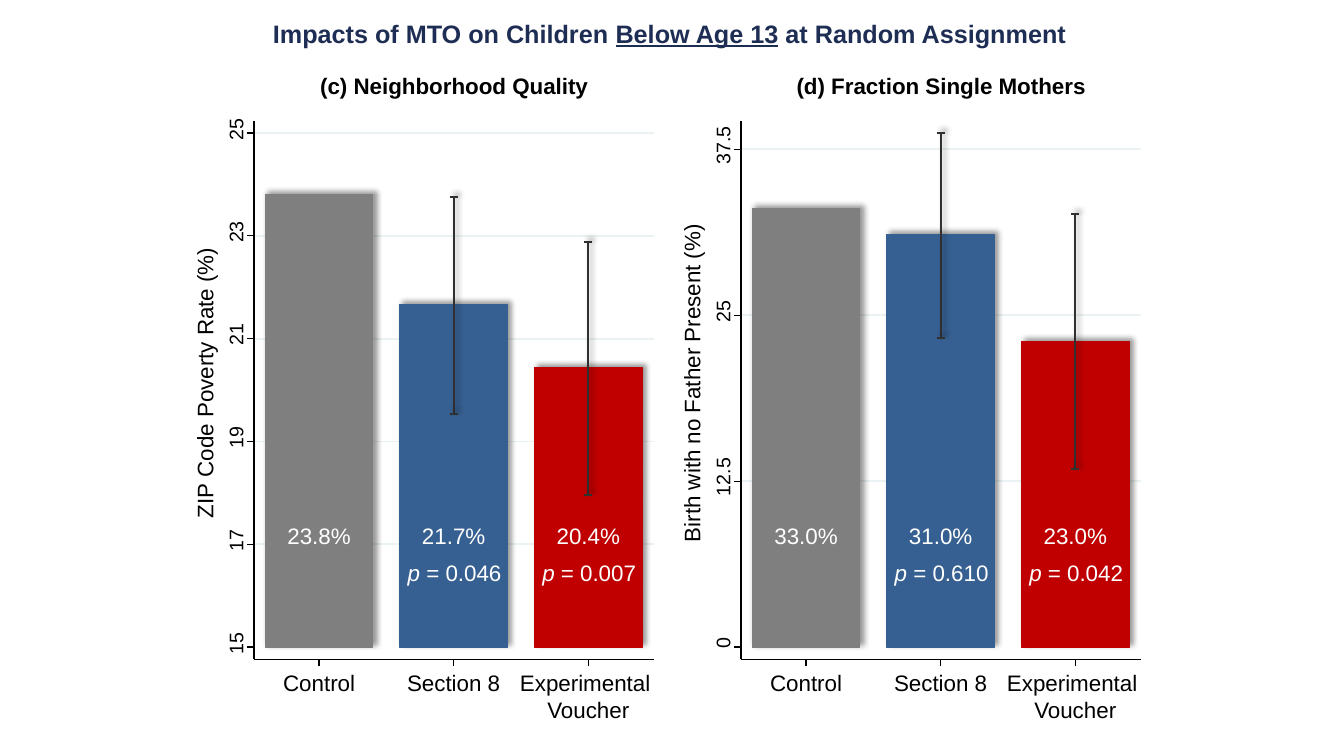
import pptx
import pptx.dml.color
import pptx.enum.shapes
import pptx.enum.text
import pptx.oxml
import pptx.oxml.ns
import pptx.util
from pptx.util import Inches

FONT = "Arial"
BLACK, WHITE, NAVY = "000000", "FFFFFF", "1E2D53"
GRID, WHISKER = "EAF2F3", "303030"
CENTER = pptx.enum.text.PP_ALIGN.CENTER
LEFT = pptx.enum.text.PP_ALIGN.LEFT

GROUPS = [
    (["Control"], "7F7F7F", 0.72),
    (["Section 8"], "376092", 0.93),
    (["Experimental ", "Voucher"], "C00000", 1.37),
]

# Each bar: value, label, p-value, low and high end of the error bar
PANELS = [
    dict(left=2.52, title="(c) Neighborhood Quality", title_w=2.9,
         axis=" ZIP Code Poverty Rate (%)", axis_w=2.78,
         ticks=[15, 17, 19, 21, 23, 25], rise=5.1,
         bars=[(23.8, "23.8%", None, None, None),
               (21.66, "21.7%", "0.046", 19.53, 23.76),
               (20.43, "20.4%", "0.007", 17.96, 22.88)]),
    dict(left=7.35, title="(d) Fraction Single Mothers", title_w=3.11,
         axis=" Birth with no Father Present (%)", axis_w=3.26,
         ticks=[0, 12.5, 25, 37.5], rise=4.94,
         bars=[(33, "33.0%", None, None, None),
               (31.05, "31.0%", "0.610", 23.3, 38.71),
               (23, "23.0%", "0.042", 13.44, 32.64)]),
]


def color(value):
    return pptx.dml.color.RGBColor.from_string(value)


def set_effects(sp, shadow):
    """Give the shape a soft shadow, or an empty effect list."""
    sp_pr = sp._element.spPr
    xml = '<a:effectLst %s>' % pptx.oxml.ns.nsdecls("a")
    if shadow:
        xml += ('<a:outerShdw blurRad="50800" dist="38100" dir="18900000" '
                'algn="bl" rotWithShape="0"><a:srgbClr val="000000">'
                '<a:alpha val="40000"/></a:srgbClr></a:outerShdw>')
    sp_pr.append(pptx.oxml.parse_xml(xml + '</a:effectLst>'))


def add_line(s, x1, y1, x2, y2, rgb=BLACK, width=0.88, shadow=False):
    line = s.shapes.add_connector(
        pptx.enum.shapes.MSO_CONNECTOR.STRAIGHT,
        Inches(x1), Inches(y1), Inches(x2), Inches(y2))
    line.line.color.rgb = color(rgb)
    line.line.width = pptx.util.Pt(width)
    set_effects(line, shadow)


def add_run(p, text, size, rgb, bold=False, italic=False, underline=False):
    r = p.add_run()
    r.text = text
    r.font.name = FONT
    r.font.size = pptx.util.Pt(size)
    r.font.color.rgb = color(rgb)
    r.font.bold, r.font.italic, r.font.underline = bold, italic, underline


def add_text(s, box, paragraphs, size=16, rgb=BLACK, align=CENTER,
             bold=False, inset=True, wrap=False, rotation=0):
    """Paragraphs are lists of (text, italic) runs."""
    sp = s.shapes.add_textbox(*map(Inches, box))
    sp.rotation = rotation
    tf = sp.text_frame
    tf.word_wrap = wrap
    if not inset:
        tf.margin_left = tf.margin_right = tf.margin_top = tf.margin_bottom = 0
    for i, runs in enumerate(paragraphs):
        p = tf.add_paragraph() if i else tf.paragraphs[0]
        p.alignment = align
        for text, italic in runs:
            add_run(p, text, size, rgb, bold, italic)


def add_upright(s, cx, cy, w, h, text, size):
    """Text that reads upwards, centred on a point."""
    add_text(s, (cx - w / 2, cy - h / 2, w, h), [[(text, False)]], size,
             align=LEFT, inset=False, rotation=270)


def add_title(s, left, top, width, height):
    title = s.shapes.title
    title.left, title.top = Inches(left), Inches(top)
    title.width, title.height = Inches(width), Inches(height)
    tf = title.text_frame
    tf.word_wrap = True
    tf.auto_size = pptx.enum.text.MSO_AUTO_SIZE.NONE
    tf.vertical_anchor = pptx.enum.text.MSO_ANCHOR.TOP
    p = tf.paragraphs[0]
    p.alignment = CENTER
    p.line_spacing = 1.0
    p.space_before = pptx.util.Pt(0)
    add_run(p, "Impacts of MTO on Children ", 18, NAVY, bold=True)
    add_run(p, "Below Age 13", 18, NAVY, bold=True, underline=True)
    add_run(p, " at Random Assignment", 18, NAVY, bold=True)


def add_panel(s, panel, left, top, width, height):
    """Bar panel; the box is the area inside the two axes."""
    right, bottom = left + width, top + height
    ticks, bar_w, pitch = panel["ticks"], 1.07, 1.335
    base = bottom - 0.12
    unit = panel["rise"] / (ticks[-1] - ticks[0])

    def y(value):
        return base - (value - ticks[0]) * unit

    # Heading and grid
    add_text(s, (left + width / 2 - panel["title_w"] / 2, top - 0.53,
                 panel["title_w"], 0.37), [[(panel["title"], False)]], bold=True)
    for tick in ticks[1:]:
        add_line(s, left, y(tick), right, y(tick), GRID, 1.25)

    # Bars
    bar_lefts = [left + 0.11 + i * pitch for i in range(len(GROUPS))]
    for x, (_, fill, _), bar in zip(bar_lefts, GROUPS, panel["bars"]):
        sp = s.shapes.add_shape(
            pptx.enum.shapes.MSO_SHAPE.RECTANGLE, Inches(x), Inches(y(bar[0])),
            Inches(bar_w), Inches(base - y(bar[0])))
        sp.fill.solid()
        sp.fill.fore_color.rgb = color(fill)
        sp.line.color.rgb = color(fill)
        sp.line.width = 0
        set_effects(sp, True)

    # Error bars with caps
    for x, (_, _, _, low, high) in zip(bar_lefts, panel["bars"]):
        if low is None:
            continue
        cx = x + bar_w / 2
        add_line(s, cx, y(low), cx, y(high), WHISKER, 1.25, True)
        for end in (high, low):
            add_line(s, cx - 0.04, y(end), cx + 0.04, y(end), WHISKER, 1.25, True)

    # Vertical axis
    add_line(s, left, bottom, left, top)
    for tick in ticks:
        add_line(s, left, y(tick), left - 0.07, y(tick))
        text = str(tick)
        label_w = 0.38 if "." in text else 0.11 * len(text)
        add_upright(s, left - 0.18, y(tick) - 0.04, label_w, 0.24, text, 14)
    add_upright(s, left - 0.49, top + 2.61, panel["axis_w"], 0.27, panel["axis"], 16)

    # Horizontal axis, group names and bar labels
    add_line(s, left, bottom, right, bottom)
    for x, (name, _, name_w), bar in zip(bar_lefts, GROUPS, panel["bars"]):
        cx = x + bar_w / 2
        add_line(s, cx, bottom, cx, bottom + 0.07)
        add_text(s, (cx - name_w / 2, bottom + 0.1, name_w, 0.27 * len(name)),
                 [[(part, False)] for part in name], inset=False)
        add_text(s, (x, bottom - 1.41, bar_w, 0.37), [[(bar[1], False)]],
                 rgb=WHITE, wrap=True)
        if bar[2]:
            add_text(s, (x - 0.02, bottom - 1.04, 1.21, 0.37),
                     [[("p", True), (" = " + bar[2], False)]],
                     rgb=WHITE, align=LEFT, wrap=True)


def main():
    prs = pptx.Presentation()
    prs.slide_width, prs.slide_height = Inches(13.33), Inches(7.5)
    s = prs.slides.add_slide(prs.slide_layouts.get_by_name("Title Only"))
    add_title(s, 1.64, 0.13, 10, 0.4)
    for panel in PANELS:
        add_panel(s, panel, panel["left"], 1.2, 3.97, 5.34)
    prs.save("out.pptx")


if __name__ == "__main__":
    main()
